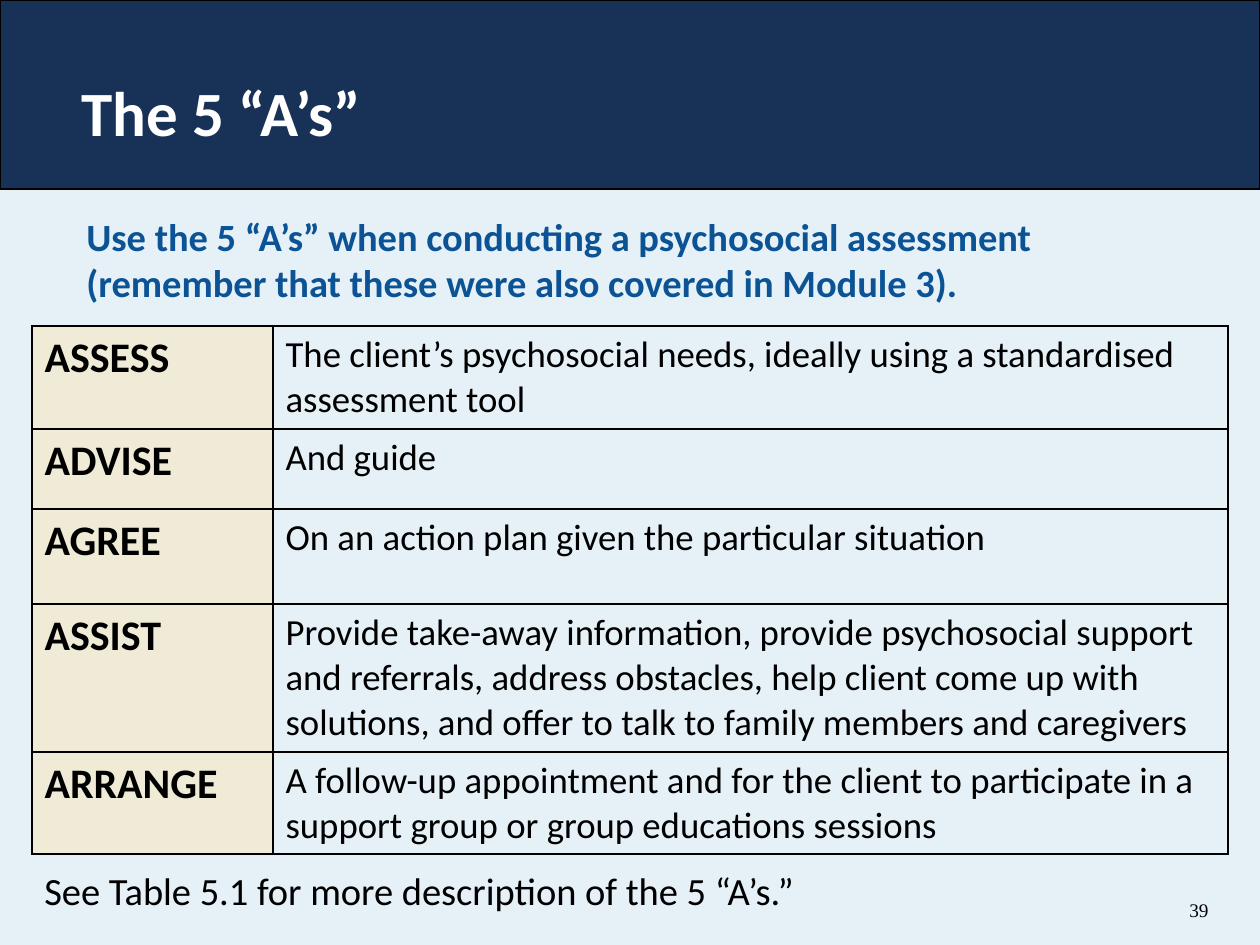
from dataclasses import dataclass

from lxml.etree import SubElement
from pptx import Presentation
from pptx.dml.color import RGBColor
from pptx.enum.shapes import MSO_SHAPE as Shape
from pptx.enum.text import MSO_ANCHOR as Anchor, PP_ALIGN as Align
from pptx.oxml.ns import qn
from pptx.util import Pt

EMU_PER_PX = 914400 / 126


def px(length):
    return round(length * EMU_PER_PX)


@dataclass(frozen=True)
class Theme:
    background: str = "E5F0F7"
    banner: str = "173157"
    label_fill: str = "F0EBD6"
    intro: str = "0B5395"
    ink: str = "000000"
    white: str = "FFFFFF"
    font: str = "Calibri"
    number_font: str = "Times New Roman"
    title_size: int = 36
    label_size: int = 24
    body_size: int = 22
    cell_size: int = 21
    number_size: int = 11
    banner_line: float = 0.75
    border: int = 1


class SlideBuilder:
    def __init__(self, slide, theme):
        self.slide = slide
        self.theme = theme
        self.paint(slide.background.fill, theme.background)

    def paint(self, fill, color):
        fill.solid()
        fill.fore_color.rgb = RGBColor.from_string(color)

    def set_text(self, frame, text, size, color, bold=False, font=None, align=Align.LEFT):
        frame.word_wrap = True
        paragraph = frame.paragraphs[0]
        paragraph.text = text
        paragraph.alignment = align
        paragraph.font.name = font or self.theme.font
        paragraph.font.size = Pt(size)
        paragraph.font.bold = bold
        paragraph.font.color.rgb = RGBColor.from_string(color)

    def banner(self, left, top, width, height):
        shape = self.slide.shapes.add_shape(Shape.RECTANGLE, *map(px, (left, top, width, height)))
        shape.shadow.inherit = False
        self.paint(shape.fill, self.theme.banner)
        self.paint(shape.line.fill, self.theme.ink)
        shape.line.width = Pt(self.theme.banner_line)

    def text(self, box, text, size, color, anchor=Anchor.TOP, **style):
        frame = self.slide.shapes.add_textbox(*map(px, box)).text_frame
        frame.vertical_anchor = anchor
        self.set_text(frame, text, size, color, **style)

    def outline(self, cell):
        properties = cell._tc.get_or_add_tcPr()
        for index, side in enumerate(("lnL", "lnR", "lnT", "lnB")):
            line = properties.makeelement(qn(f"a:{side}"), {"w": str(Pt(self.theme.border))})
            solid = SubElement(line, qn("a:solidFill"))
            SubElement(solid, qn("a:srgbClr"), val=self.theme.ink)
            properties.insert(index, line)

    def table(self, left, top, widths, heights, rows):
        theme = self.theme
        box = map(px, (left, top, sum(widths), sum(heights)))
        table = self.slide.shapes.add_table(len(rows), len(widths), *box).table
        table.first_row = table.horz_banding = False
        for column, width in zip(table.columns, widths):
            column.width = px(width)
        for row, height, (label, description) in zip(table.rows, heights, rows):
            row.height = px(height)
            label_cell, description_cell = row.cells
            self.paint(label_cell.fill, theme.label_fill)
            description_cell.fill.background()
            self.set_text(label_cell.text_frame, label, theme.label_size, theme.ink, bold=True)
            self.set_text(description_cell.text_frame, description, theme.cell_size, theme.ink)
            for cell in row.cells:
                self.outline(cell)


STEPS = [
    ("ASSESS", "The client’s psychosocial needs, ideally using a standardised assessment tool"),
    ("ADVISE", "And guide"),
    ("AGREE", "On an action plan given the particular situation"),
    ("ASSIST", "Provide take-away information, provide psychosocial support and referrals, "
               "address obstacles, help client come up with solutions, and offer to talk to "
               "family members and caregivers"),
    ("ARRANGE", "A follow-up appointment and for the client to participate in a support group "
                "or group educations sessions"),
]


def main():
    theme = Theme()
    presentation = Presentation()
    presentation.slide_width = px(1260)
    presentation.slide_height = px(945)
    slide = presentation.slides.add_slide(presentation.slide_layouts[6])
    builder = SlideBuilder(slide, theme)

    builder.banner(0, 0, 1260, 189)
    builder.text((69, 67, 1139, 100), "The 5 “A’s”", theme.title_size, theme.white, bold=True)
    builder.text((74, 207, 1134, 110),
                 "Use the 5 “A’s” when conducting a psychosocial assessment "
                 "(remember that these were also covered in Module 3).",
                 theme.body_size, theme.intro, bold=True)
    builder.text((1144, 885, 77, 50), "39", theme.number_size, theme.ink,
                 anchor=Anchor.MIDDLE, font=theme.number_font, align=Align.RIGHT)
    builder.table(32, 326, (241, 955), (103, 80, 95, 148, 102), STEPS)
    builder.text((32, 861, 963, 59), "See Table 5.1 for more description of the 5 “A’s.”",
                 theme.body_size, theme.ink)
    presentation.save("out.pptx")


if __name__ == "__main__":
    main()
